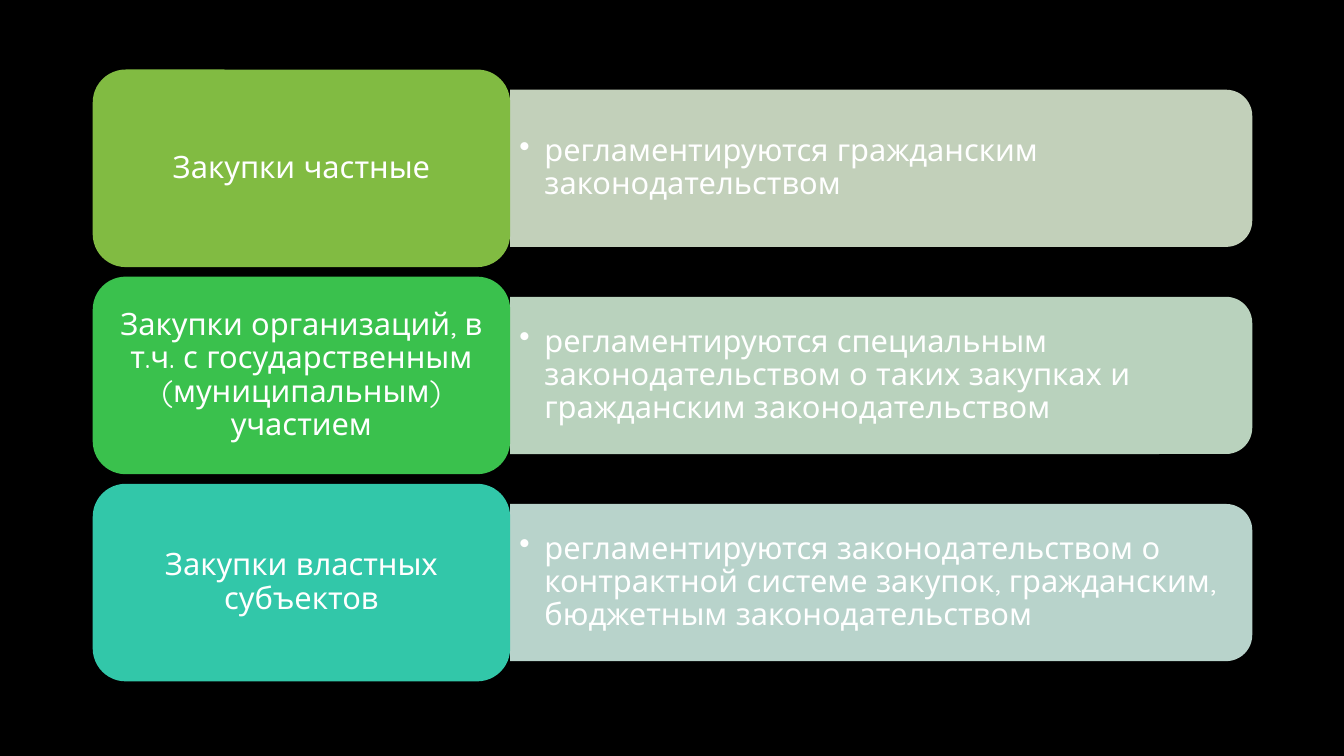
from dataclasses import dataclass

from lxml import etree
from pptx import Presentation
from pptx import util as u
from pptx.dml.color import RGBColor
from pptx.enum import shapes, text
from pptx.oxml import ns


@dataclass(frozen=True)
class Theme:
    """Colours, font and type size of the slide."""
    background: str = "000000"
    ink: str = "FFFFFF"
    labels: tuple = ("81BB42", "3AC14D", "32C7A9")
    panels: tuple = ("D8E7CF", "CEE9D2", "CDEBE2")
    panel_opacity: int = 90
    font: str = "Quicksand"
    size: int = 22


@dataclass(frozen=True)
class Box:
    """A rectangle in inches."""
    left: float
    top: float
    width: float
    height: float

    def lengths(self):
        """Return left, top, width and height as lengths."""
        return [u.Inches(side) for side in (self.left, self.top, self.width, self.height)]


THEME = Theme()
PURCHASES = (
    ("Закупки частные", "регламентируются гражданским законодательством"),
    ("Закупки организаций, в т.ч. с государственным (муниципальным) участием",
     "регламентируются специальным законодательством о таких закупках и "
     "гражданским законодательством"),
    ("Закупки властных субъектов",
     "регламентируются законодательством о контрактной системе закупок, "
     "гражданским, бюджетным законодательством"),
)
LABEL_WIDTH = 4.14
LABEL_HEIGHT = 1.96
PANEL_HEIGHT = 1.56
TEXT_WIDTH = 7.28
TEXT_HEIGHT = 1.41


def add_filled(group, kind, box, colour):
    """Add a plain preset shape without outline or shadow."""
    shape = group.shapes.add_shape(kind, *box.lengths())
    shape.shadow.inherit = False
    shape.fill.solid()
    shape.fill.fore_color.rgb = RGBColor.from_string(colour)
    shape.line.fill.background()
    return shape


def write(shape, words, bullet=False):
    """Write one paragraph, either centred or bulleted."""
    frame = shape.text_frame
    frame.word_wrap = True
    frame.vertical_anchor = text.MSO_ANCHOR.MIDDLE
    frame.margin_left = frame.margin_right = u.Inches(0.09)
    frame.margin_top = frame.margin_bottom = u.Inches(0.05)
    para = frame.paragraphs[0]
    para.line_spacing = 0.9
    para.alignment = text.PP_ALIGN.LEFT if bullet else text.PP_ALIGN.CENTER
    if bullet:
        para.level = 1
        props = para._p.get_or_add_pPr()
        props.set("marL", str(u.Inches(0.25)))
        props.set("indent", str(u.Inches(-0.25)))
        etree.SubElement(props, ns.qn("a:buChar"), char="•")
    span = para.add_run()
    span.text = words
    span.font.name = THEME.font
    span.font.size = u.Pt(THEME.size)
    span.font.color.rgb = RGBColor.from_string(THEME.ink)


def add_panel(group, box, colour, words):
    """Add the translucent panel, rounded on its right, and its bulleted text."""
    upright = Box(box.left + (box.width - box.height) / 2,
                  box.top + (box.height - box.width) / 2, box.height, box.width)
    panel = add_filled(group, shapes.MSO_SHAPE.ROUND_2_SAME_RECTANGLE, upright, colour)
    panel.rotation = 90
    tint = panel.fill._xPr.find(".//" + ns.qn("a:srgbClr"))
    etree.SubElement(tint, ns.qn("a:alpha"), val=str(THEME.panel_opacity * 1000))
    inset = (box.height - TEXT_HEIGHT) / 2
    area = Box(box.left, box.top + inset, TEXT_WIDTH, TEXT_HEIGHT)
    write(group.shapes.add_textbox(*area.lengths()), words, bullet=True)


def add_row(group, box, colours, words):
    """Add a label with its explanatory panel to the right."""
    panel = Box(box.left + LABEL_WIDTH, box.top + (box.height - PANEL_HEIGHT) / 2,
                box.width - LABEL_WIDTH, PANEL_HEIGHT)
    add_panel(group, panel, colours[1], words[1])
    label_box = Box(box.left, box.top, LABEL_WIDTH, box.height)
    label = add_filled(group, shapes.MSO_SHAPE.ROUNDED_RECTANGLE, label_box, colours[0])
    write(label, words[0])


def add_purchases(page, box):
    """Spread the purchase rows evenly over the box."""
    group = page.shapes.add_group_shape()
    pitch = (box.height - LABEL_HEIGHT) / (len(PURCHASES) - 1)
    rows = zip(THEME.labels, THEME.panels, PURCHASES)
    for index, (label, panel, words) in enumerate(rows):
        row = Box(box.left, box.top + index * pitch, box.width, LABEL_HEIGHT)
        add_row(group, row, (label, panel), words)


def main():
    """Build and save the deck."""
    deck = Presentation()
    deck.slide_width, deck.slide_height = u.Inches(13.33), u.Inches(7.5)
    page = deck.slides.add_slide(deck.slide_layouts[6])
    page.background.fill.solid()
    page.background.fill.fore_color.rgb = RGBColor.from_string(THEME.background)
    add_purchases(page, Box(0.92, 0.69, 11.5, 6.07))
    deck.save("out.pptx")


if __name__ == "__main__":
    main()
